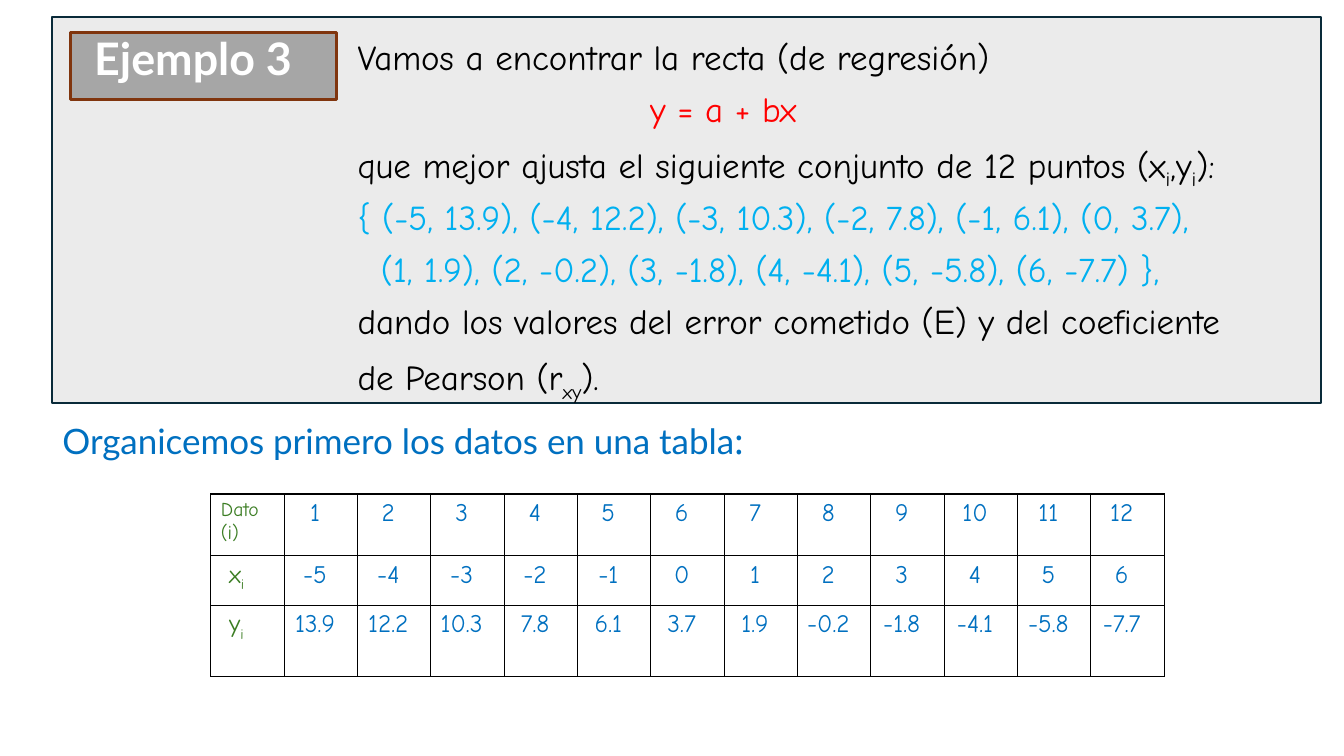
from dataclasses import dataclass

from pptx import Presentation
from pptx import util as u
from pptx.dml.color import RGBColor
from pptx.enum import shapes, text
from pptx.oxml import ns, xmlchemy

Pt = u.Pt
BLACK = RGBColor(0x00, 0x00, 0x00)
WHITE = RGBColor(0xFF, 0xFF, 0xFF)
RED = RGBColor(0xFF, 0x00, 0x00)
SKY = RGBColor(0x00, 0xB0, 0xF0)
BLUE = RGBColor(0x00, 0x70, 0xC0)
GREEN = RGBColor(0x3B, 0x7D, 0x23)
PANEL_GRAY = RGBColor(0xD9, 0xD9, 0xD9)
PANEL_LINE = RGBColor(0x09, 0x2A, 0x39)
LABEL_GRAY = RGBColor(0xA6, 0xA6, 0xA6)
LABEL_LINE = RGBColor(0x80, 0x35, 0x0E)
HAND = "Comic Neue"
SANS = "Lato"
COLON_FONT = "Noto Sans CJK JP"


@dataclass
class Style:
    color: RGBColor
    size: float = 25
    font: str = HAND
    bold: bool = False


@dataclass
class Line:
    """Pieces at odd positions are subscripts; indent is in points."""
    pieces: tuple[str, ...]
    color: RGBColor = BLACK
    indent: float = 0


STATEMENT = [
    Line(("Vamos a encontrar la recta (de regresión)",)),
    Line(("y = a + bx",), RED, 209),
    Line(("que mejor ajusta el siguiente conjunto de 12 puntos (x", "i", ",y", "i", "):")),
    Line(("{ (-5, 13.9), (-4, 12.2), (-3, 10.3), (-2, 7.8), (-1, 6.1), (0, 3.7),",), SKY),
    Line(("(1, 1.9), (2, -0.2), (3, -1.8), (4, -4.1), (5, -5.8), (6, -7.7) },",), SKY, 16.7),
    Line(("dando los valores del error cometido (E) y del coeficiente",)),
    Line(("de Pearson (r", "xy", ").")),
]
X_VALUES = range(-5, 7)
Y_VALUES = (13.9, 12.2, 10.3, 7.8, 6.1, 3.7, 1.9, -0.2, -1.8, -4.1, -5.8, -7.7)
ROW_HEIGHTS = (44, 35.5, 51)
COLUMN_WIDTH = 52.4


def style_span(span, style: Style) -> None:
    span.font.name = style.font
    span.font.size = Pt(style.size)
    span.font.bold = style.bold
    span.font.color.rgb = style.color


def write_pieces(para, pieces: tuple[str, ...], style: Style) -> None:
    """Write the pieces as runs, lowering every second one."""
    para.text = pieces[0]
    for piece in pieces[1:]:
        para.add_run().text = piece
    for number, span in enumerate(para.runs):
        style_span(span, style)
        if number % 2:
            span._r.get_or_add_rPr().set("baseline", "-25000")


def format_body_para(para, indent: float = 0) -> None:
    para.line_spacing = 0.9
    para.space_before = Pt(10)
    properties = para._p.get_or_add_pPr()
    properties.set("marL", str(Pt(indent)))
    properties.set("indent", "0")
    properties.append(xmlchemy.OxmlElement("a:buNone"))


def place(box, left: float, top: float, width: float, height: float) -> None:
    box.left, box.top, box.width, box.height = Pt(left), Pt(top), Pt(width), Pt(height)
    frame = box.text_frame
    frame.word_wrap = True
    frame.auto_size = text.MSO_AUTO_SIZE.NONE
    frame.vertical_anchor = text.MSO_ANCHOR.TOP


def paint(box, fill: RGBColor, line: RGBColor, width: float) -> None:
    box.fill.solid()
    box.fill.fore_color.rgb = fill
    box.line.color.rgb = line
    box.line.width = Pt(width)


def add_panel(page) -> None:
    """Draw the half-transparent panel behind the placeholders."""
    panel = page.shapes.add_shape(
        shapes.MSO_SHAPE.RECTANGLE, Pt(37.4), Pt(12.2), Pt(906.5), Pt(275.8))
    panel.shadow.inherit = False
    paint(panel, PANEL_GRAY, PANEL_LINE, 1.5)
    alpha = xmlchemy.OxmlElement("a:alpha")
    alpha.set("val", "50000")
    panel.element.spPr.find(".//" + ns.qn("a:srgbClr")).append(alpha)
    page.shapes.title.element.addprevious(panel.element)


def write_title(title) -> None:
    place(title, 50.4, 23, 190, 48.2)
    paint(title, LABEL_GRAY, LABEL_LINE, 2)
    title.text_frame.margin_right = Pt(22)
    para = title.text_frame.paragraphs[0]
    write_pieces(para, ("Ejemplo 3",), Style(WHITE, 32, SANS, True))
    para.alignment = text.PP_ALIGN.CENTER
    para.line_spacing = 0.9


def write_statement(body) -> None:
    place(body, 248.2, 25, 695, 262)
    frame = body.text_frame
    frame.text = "\n".join("".join(line.pieces) for line in STATEMENT)
    for para, line in zip(frame.paragraphs, STATEMENT):
        write_pieces(para, line.pieces, Style(line.color))
        format_body_para(para, line.indent)


def write_prompt(body) -> None:
    place(body, 37.4, 299.5, 915, 40)
    para = body.text_frame.paragraphs[0]
    para.text = "Organicemos primero los datos en una tabla"
    para.add_run().text = ":"
    for span, font in zip(para.runs, (SANS, COLON_FONT)):
        style_span(span, Style(BLUE, font=font))
    format_body_para(para)


def add_borders(cell) -> None:
    properties = cell._tc.get_or_add_tcPr()
    for number, side in enumerate(("a:lnL", "a:lnR", "a:lnT", "a:lnB")):
        border = xmlchemy.OxmlElement(side)
        border.set("w", str(Pt(1)))
        fill = xmlchemy.OxmlElement("a:solidFill")
        color = xmlchemy.OxmlElement("a:srgbClr")
        color.set("val", str(BLACK))
        fill.append(color)
        border.append(fill)
        properties.insert(number, border)


def add_data_table(page) -> None:
    rows = [
        [("Dato",), *[(str(i),) for i in range(1, 13)]],
        [("x", "i"), *[(str(x),) for x in X_VALUES]],
        [("y", "i"), *[(str(y),) for y in Y_VALUES]],
    ]
    count = len(rows[0])
    table = page.shapes.add_table(
        len(rows), count, Pt(150.6), Pt(352.8),
        Pt(COLUMN_WIDTH * count), Pt(sum(ROW_HEIGHTS))).table
    table.first_row = False
    table.horz_banding = False
    for column in table.columns:
        column.width = Pt(COLUMN_WIDTH)
    for r, (row, height) in enumerate(zip(rows, ROW_HEIGHTS)):
        table.rows[r].height = Pt(height)
        for c, pieces in enumerate(row):
            cell = table.cell(r, c)
            cell.fill.background()
            add_borders(cell)
            para = cell.text_frame.paragraphs[0]
            if c:
                cell.margin_left, cell.margin_right = Pt(3.6), Pt(12)
                para.alignment = text.PP_ALIGN.CENTER
            elif r:
                cell.margin_left = Pt(13)
            write_pieces(para, pieces, Style(BLUE if c else GREEN, 18))
    corner = table.cell(0, 0).text_frame
    corner.text = "Dato\n(i)"
    for para in corner.paragraphs:
        style_span(para.runs[0], Style(GREEN, 14))


def main() -> None:
    deck = Presentation()
    deck.slide_width, deck.slide_height = Pt(960), Pt(540)
    page = deck.slides.add_slide(deck.slide_layouts.get_by_name("Two Content"))
    add_panel(page)
    write_title(page.shapes.title)
    write_statement(page.placeholders[1])
    write_prompt(page.placeholders[2])
    add_data_table(page)
    deck.save("out.pptx")


if __name__ == "__main__":
    main()
